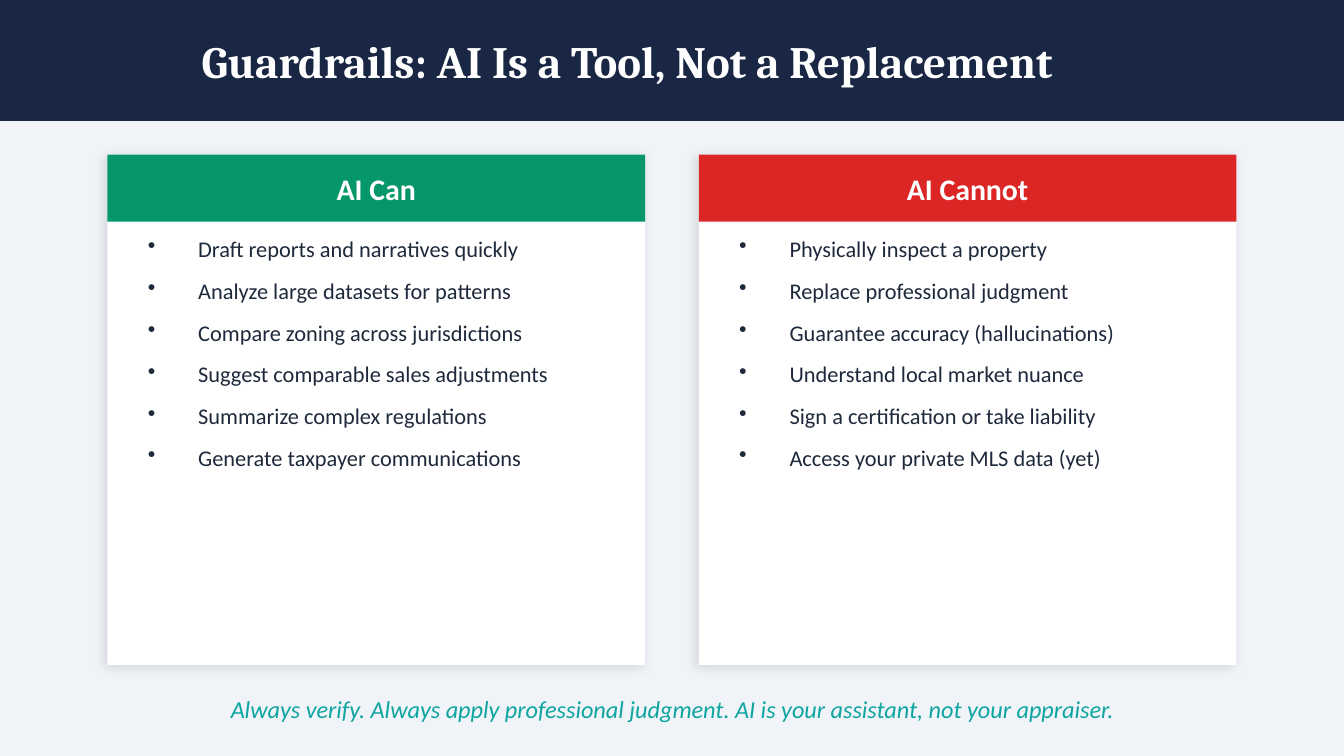
from lxml import etree
from pptx import Presentation
from pptx.dml.color import RGBColor
from pptx.enum.shapes import MSO_SHAPE
from pptx.enum.text import MSO_ANCHOR, PP_ALIGN
from pptx.oxml.ns import qn
from pptx.util import Pt

RECTANGLE = MSO_SHAPE.RECTANGLE
TOP, MIDDLE = MSO_ANCHOR.TOP, MSO_ANCHOR.MIDDLE
LEFT, CENTER = PP_ALIGN.LEFT, PP_ALIGN.CENTER

NAVY = RGBColor(0x1A, 0x27, 0x44)
PALE = RGBColor(0xF0, 0xF4, 0xF8)
WHITE = RGBColor(0xFF, 0xFF, 0xFF)
GREEN = RGBColor(0x05, 0x96, 0x69)
RED = RGBColor(0xDC, 0x26, 0x26)
SLATE = RGBColor(0x1E, 0x29, 0x3B)
TEAL = RGBColor(0x0E, 0xA5, 0xA0)

SLIDE_WIDTH, SLIDE_HEIGHT = 720, 405
HEADER_HEIGHT = 64.8
MARGIN = 57.6
CARD_TOP, CARD_WIDTH, CARD_HEIGHT = 82.8, 288, 273.6
CARD_GAP = 28.8
BANNER_HEIGHT = 36
BULLET_INDENT = 27

CARDS = [
    ("AI Can", GREEN, [
        "Draft reports and narratives quickly",
        "Analyze large datasets for patterns",
        "Compare zoning across jurisdictions",
        "Suggest comparable sales adjustments",
        "Summarize complex regulations",
        "Generate taxpayer communications",
    ]),
    ("AI Cannot", RED, [
        "Physically inspect a property",
        "Replace professional judgment",
        "Guarantee accuracy (hallucinations)",
        "Understand local market nuance",
        "Sign a certification or take liability",
        "Access your private MLS data (yet)",
    ]),
]


class SlideBuilder:
    heading_font = "Cambria"
    body_font = "Calibri"

    def __init__(self, slide):
        self.slide = slide
        slide.background.fill.solid()
        slide.background.fill.fore_color.rgb = PALE

    def block(self, left, top, width, height, color):
        block = self.slide.shapes.add_shape(
            RECTANGLE, Pt(left), Pt(top), Pt(width), Pt(height))
        block.fill.solid()
        block.fill.fore_color.rgb = color
        block.line.fill.background()
        block.shadow.inherit = False
        return block

    def panel(self, left, top, width, height):
        """Add a white block with a soft shadow."""
        panel = self.block(left, top, width, height, WHITE)
        effects = panel._element.spPr.find(qn("a:effectLst"))
        shadow = etree.SubElement(
            effects, qn("a:outerShdw"), blurRad=str(Pt(6)), dist=str(Pt(2)),
            dir=str(135 * 60000), algn="bl", rotWithShape="0")
        black = etree.SubElement(shadow, qn("a:srgbClr"), val="000000")
        etree.SubElement(black, qn("a:alpha"), val="12000")

    def text(self, left, top, width, height, lines, size, color, font=None,
             bold=False, italic=False, align=CENTER, anchor=MIDDLE,
             bulleted=False):
        frame = self.slide.shapes.add_textbox(
            Pt(left), Pt(top), Pt(width), Pt(height)).text_frame
        frame.word_wrap = True
        frame.vertical_anchor = anchor
        frame.margin_left = frame.margin_right = Pt(0)
        frame.margin_top = frame.margin_bottom = Pt(0)
        frame.text = "\n".join(lines)
        for paragraph in frame.paragraphs:
            paragraph.alignment = align
            if bulleted:
                self.bullet(paragraph)
            paragraph.font.name = font or self.body_font
            paragraph.font.size = Pt(size)
            paragraph.font.bold = bold
            paragraph.font.italic = italic
            paragraph.font.color.rgb = color

    def bullet(self, paragraph):
        paragraph.space_after = Pt(8)
        properties = paragraph._p.get_or_add_pPr()
        properties.set("marL", str(Pt(BULLET_INDENT)))
        properties.set("indent", str(-Pt(BULLET_INDENT)))
        etree.SubElement(properties, qn("a:buChar"), char="•")

    def card(self, left, heading, color, points):
        self.panel(left, CARD_TOP, CARD_WIDTH, CARD_HEIGHT)
        banner = (left, CARD_TOP, CARD_WIDTH, BANNER_HEIGHT)
        self.block(*banner, color)
        self.text(*banner, [heading], 16, WHITE, bold=True)
        self.text(left + 21.6, CARD_TOP + 43.2, 252, 216, points, 12, SLATE,
                  align=LEFT, anchor=TOP, bulleted=True)


def main():
    presentation = Presentation()
    presentation.slide_width = Pt(SLIDE_WIDTH)
    presentation.slide_height = Pt(SLIDE_HEIGHT)
    blank = presentation.slide_layouts[6]
    builder = SlideBuilder(presentation.slides.add_slide(blank))

    builder.block(0, 0, SLIDE_WIDTH, HEADER_HEIGHT, NAVY)
    builder.text(108, 0, 590.4, HEADER_HEIGHT,
                 ["Guardrails: AI Is a Tool, Not a Replacement"], 24, WHITE,
                 font=builder.heading_font, bold=True, align=LEFT)

    for column, (heading, color, points) in enumerate(CARDS):
        left = MARGIN + column * (CARD_WIDTH + CARD_GAP)
        builder.card(left, heading, color, points)

    builder.text(MARGIN, 367.2, SLIDE_WIDTH - 2 * MARGIN, 25.2,
                 ["Always verify. Always apply professional judgment. "
                  "AI is your assistant, not your appraiser."],
                 13, TEAL, italic=True)
    presentation.save("out.pptx")


if __name__ == "__main__":
    main()
